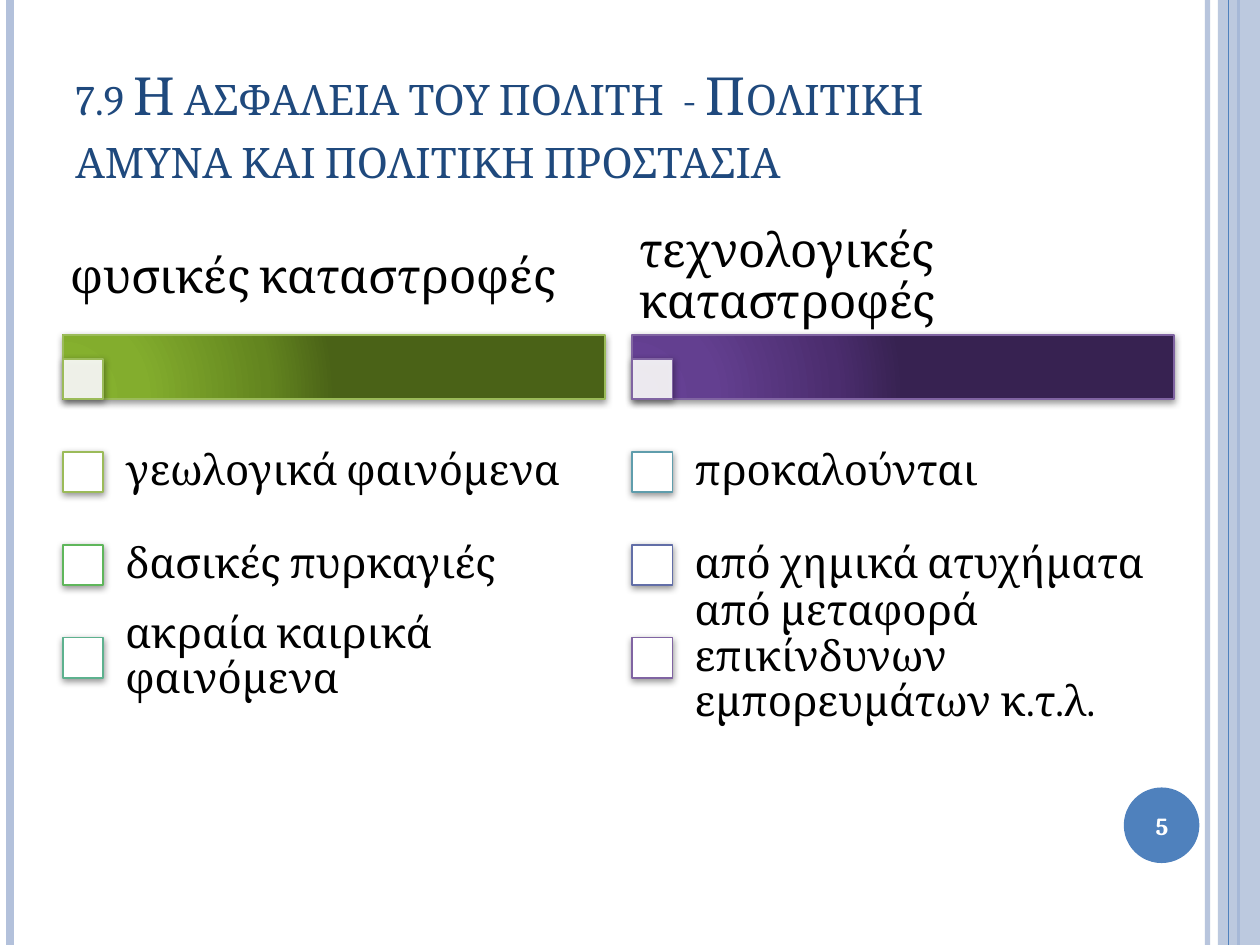
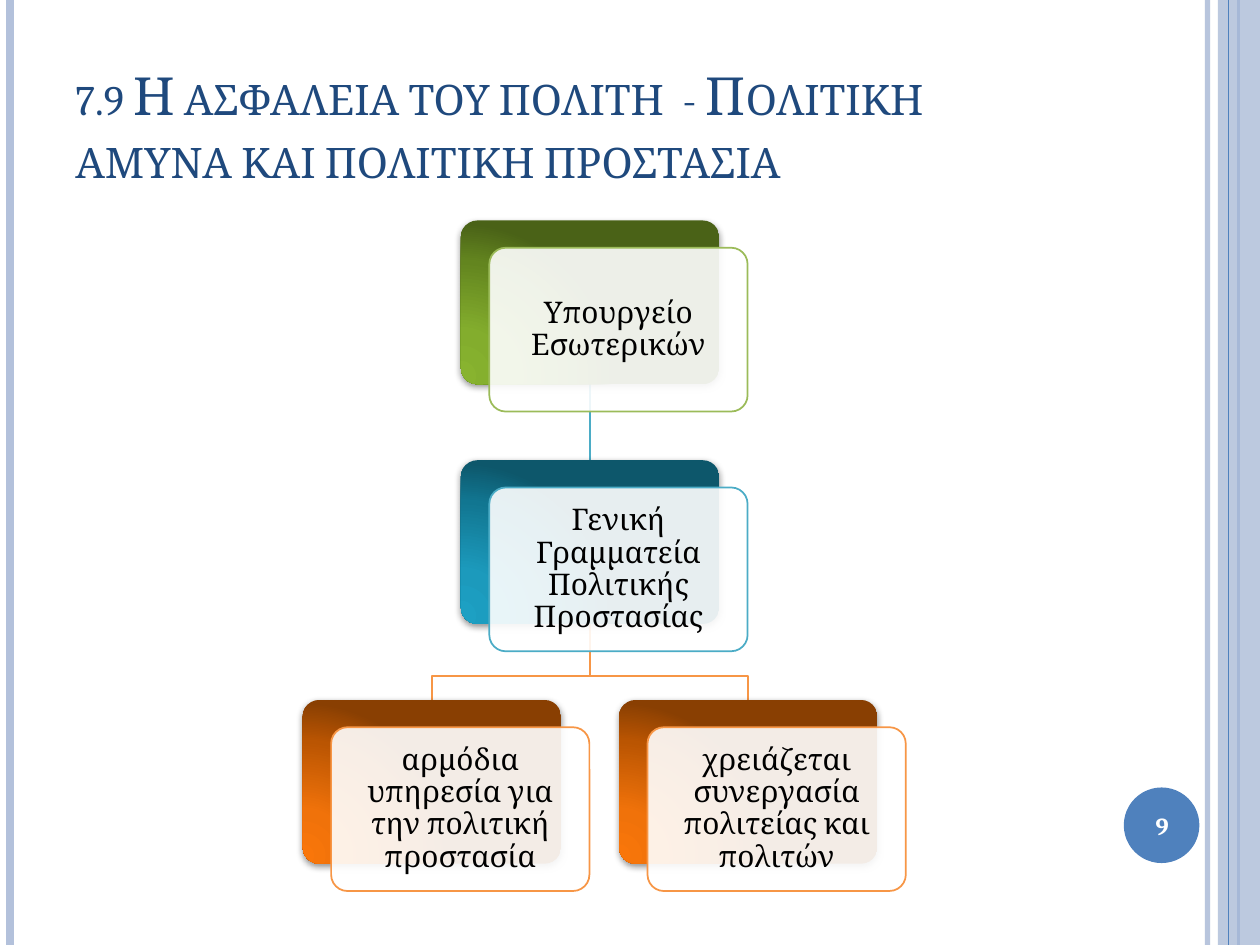
from dataclasses import dataclass

from lxml.etree import SubElement
from pptx import Presentation
from pptx.dml.color import RGBColor
from pptx.enum.shapes import MSO_CONNECTOR, MSO_SHAPE
from pptx.enum.text import MSO_ANCHOR, PP_ALIGN
from pptx.oxml.ns import qn
from pptx.util import Pt

FONT = "Cambria"
TITLE = "7.9 Η ασφαλεια του πολιτη  - Πολιτικη αμυνα και πολιτικη προστασια"
COLORS = {
    "white": "FFFFFF", "black": "000000", "title": "1F497D",
    "pale": "B3C1DB", "blue": "4F81BD",
    "green": "9BBB59", "leaf": "5FB65B", "mint": "5DB18E",
    "purple": "8064A2", "teal": "5F9DAC", "indigo": "626EA7",
    "aqua": "4BACC6", "orange": "F79646",
}
GRADIENTS = {
    "green": ("88B32F", "83AD2D", "63851F", "4A6217"),
    "purple": ("674195", "633F90", "4B2D6E", "372251"),
    "aqua": ("1DA0C3", "1C9ABC", "117691", "0D576B"),
    "orange": ("F9760A", "F0720A", "BA5502", "893F02"),
}
GRADIENT_STOPS = (0, 30, 75, 100)

# Disaster columns
COLUMN_W, BAR_Y, BAR_H = 309.6, 191.4, 36.8
BOX = 23
ROW_Y, ROW_H = 243.3, 53
LABEL_DX = 22

# Organisation chart cards
CARD_W, CARD_H, CARD_TOP = 147.6, 93.6, 126
LEVEL_STEP, KNEE_UP = 137, 13.7
FRONT_DX, FRONT_DY, CARD_PAD = 16.2, 15.6, 2.7
CENTER_X, BRANCH_DX = 337.2, 90.4


@dataclass(frozen=True)
class Rule:
    x: float
    color: str
    width: float
    alpha: int = 100


@dataclass(frozen=True)
class Item:
    text: str
    color: str


@dataclass(frozen=True)
class Column:
    x: float
    heading: str
    color: str
    items: tuple[Item, ...]


@dataclass(frozen=True)
class Card:
    text: str
    color: str
    level: int
    branch: int = 0
    parent: int | None = None

    @property
    def center(self) -> float:
        return CENTER_X + self.branch * BRANCH_DX

    @property
    def top(self) -> float:
        return CARD_TOP + self.level * LEVEL_STEP


RULES = (
    Rule(690, "pale", 3, 93),
    Rule(5.9, "pale", 4.5),
    Rule(707.8, "blue", 1.5),
)
INNER_RULE = Rule(702, "blue", 0.75)

COLUMNS = (
    Column(36, "φυσικές καταστροφές", "green", (
        Item("γεωλογικά φαινόμενα", "green"),
        Item("δασικές πυρκαγιές", "leaf"),
        Item("ακραία καιρικά φαινόμενα", "mint"),
    )),
    Column(361.3, "τεχνολογικές καταστροφές", "purple", (
        Item("προκαλούνται", "teal"),
        Item("από χημικά ατυχήματα", "indigo"),
        Item("από μεταφορά επικίνδυνων εμπορευμάτων κ.τ.λ.", "purple"),
    )),
)

CARDS = (
    Card("Υπουργείο Εσωτερικών", "green", 0),
    Card("Γενική Γραμματεία Πολιτικής Προστασίας", "aqua", 1, parent=0),
    Card("αρμόδια υπηρεσία για την πολιτική προστασία", "orange", 2, -1, 1),
    Card("χρειάζεται συνεργασία πολιτείας και πολιτών", "orange", 2, 1, 1),
)


def rgb(name: str) -> RGBColor:
    return RGBColor.from_string(COLORS[name])


def set_alpha(sp, percent: int) -> None:
    """Make the first colour of the shape translucent."""
    if percent < 100:
        clr = next(sp._element.spPr.iter(qn("a:srgbClr")))
        SubElement(clr, qn("a:alpha"), val=str(percent * 1000))


def set_gradient(sp, name: str) -> None:
    sp.fill.gradient()
    grad = sp._element.spPr.find(qn("a:gradFill"))
    grad.clear()
    grad.set("rotWithShape", "1")
    stops = SubElement(grad, qn("a:gsLst"))
    for pos, color in zip(GRADIENT_STOPS, GRADIENTS[name]):
        gs = SubElement(stops, qn("a:gs"), pos=str(pos * 1000))
        SubElement(gs, qn("a:srgbClr"), val=color)
    circle = SubElement(grad, qn("a:path"), path="circle")
    SubElement(circle, qn("a:fillToRect"),
               l="5000", t="100000", r="120000", b="10000")


def set_shadow(sp) -> None:
    effects = sp._element.spPr.find(qn("a:effectLst"))
    shadow = SubElement(effects, qn("a:outerShdw"), blurRad=str(Pt(4)),
                        dist=str(Pt(1.6)), dir="5400000", rotWithShape="0")
    clr = SubElement(shadow, qn("a:srgbClr"), val=COLORS["black"])
    SubElement(clr, qn("a:alpha"), val="42000")


def set_line(sp, color: str | None, width: float = 1) -> None:
    if color:
        sp.line.color.rgb = rgb(color)
        sp.line.width = Pt(width)
    else:
        sp.line.fill.background()


def add_box(s, kind, x: float, y: float, w: float, h: float, *,
            fill: str = "white", alpha: int = 100, gradient: str | None = None,
            line: str | None = None, shadow: bool = False):
    sp = s.shapes.add_shape(kind, Pt(x), Pt(y), Pt(w), Pt(h))
    sp.shadow.inherit = False
    if gradient:
        set_gradient(sp, gradient)
    else:
        sp.fill.solid()
        sp.fill.fore_color.rgb = rgb(fill)
        set_alpha(sp, alpha)
    set_line(sp, line)
    if shadow:
        set_shadow(sp)
    if kind == MSO_SHAPE.ROUNDED_RECTANGLE:
        sp.adjustments[0] = 0.1
    return sp


def add_line(s, x1: float, y1: float, x2: float, y2: float,
             color: str, width: float = 1, alpha: int = 100) -> None:
    sp = s.shapes.add_connector(MSO_CONNECTOR.STRAIGHT,
                                Pt(x1), Pt(y1), Pt(x2), Pt(y2))
    set_line(sp, color, width)
    set_alpha(sp, alpha)
    SubElement(sp._element.spPr, qn("a:effectLst"))


def add_text(s, text: str, x: float, y: float, w: float, h: float, size: float,
             *, color: str = "black", bold: bool = False, small_caps: bool = False,
             align=PP_ALIGN.LEFT, anchor=MSO_ANCHOR.MIDDLE,
             spacing: float = 0.9, inset: tuple[float, float] = (7.2, 3.6)) -> None:
    tf = s.shapes.add_textbox(Pt(x), Pt(y), Pt(w), Pt(h)).text_frame
    p = tf.paragraphs[0]
    r = p.add_run()
    r.text = text
    across, down = map(Pt, inset)
    formats = (
        (tf, {"word_wrap": True, "vertical_anchor": anchor,
              "margin_left": across, "margin_right": across,
              "margin_top": down, "margin_bottom": down}),
        (p, {"alignment": align, "line_spacing": spacing}),
        (r.font, {"name": FONT, "size": Pt(size), "bold": bold}),
    )
    for target, values in formats:
        for name, value in values.items():
            setattr(target, name, value)
    r.font.color.rgb = rgb(color)
    if small_caps:
        r._r.get_or_add_rPr().set("cap", "small")


def add_rule(s, rule: Rule) -> None:
    add_line(s, rule.x, 0, rule.x, 540, rule.color, rule.width, rule.alpha)


def add_frame(s) -> None:
    """Side bands and the disc behind the slide number."""
    for rule in RULES:
        add_rule(s, rule)
    add_box(s, MSO_SHAPE.RECTANGLE, 696, 0, 24, 540, fill="pale", alpha=87)
    add_rule(s, INNER_RULE)
    add_box(s, MSO_SHAPE.OVAL, 642.2, 450, 43.2, 43.2, fill="blue")


def add_title_and_number(s, number: int) -> None:
    add_text(s, str(number), 640, 451.4, 48.2, 41, 14, color="white",
             bold=True, align=PP_ALIGN.CENTER, spacing=1.0)
    add_text(s, TITLE, 36, 21.6, 588, 90, 30, color="title", small_caps=True,
             anchor=MSO_ANCHOR.BOTTOM, spacing=1.0)


def add_column(s, col: Column) -> None:
    rect = MSO_SHAPE.RECTANGLE
    add_box(s, rect, col.x, BAR_Y, COLUMN_W, BAR_H,
            gradient=col.color, line=col.color, shadow=True)
    add_box(s, rect, col.x, BAR_Y + BAR_H - BOX, BOX, BOX,
            alpha=90, line=col.color, shadow=True)
    add_text(s, col.heading, col.x, 126, COLUMN_W, BAR_Y - 126, 27,
             inset=(4.1, 2.7))
    for i, item in enumerate(col.items):
        y = ROW_Y + i * ROW_H
        add_box(s, rect, col.x, y + (ROW_H - BOX) / 2, BOX, BOX,
                line=item.color, shadow=True)
        add_text(s, item.text, col.x + LABEL_DX, y, COLUMN_W - LABEL_DX, ROW_H,
                 24, inset=(13.7, 13.7))


def add_link(s, card: Card) -> None:
    """Line from the parent's lower edge to the card's upper edge."""
    parent = CARDS[card.parent]
    start = (parent.center, parent.top + CARD_H)
    end = (card.center, card.top)
    if start[0] == end[0]:
        add_line(s, *start, *end, card.color)
        return
    knee = card.top - KNEE_UP
    points = [(Pt(x), Pt(y)) for x, y in
              (start, (start[0], knee), (end[0], knee), end)]
    builder = s.shapes.build_freeform(*points[0])
    builder.add_line_segments(points[1:], close=False)
    sp = builder.convert_to_shape()
    sp.shadow.inherit = False
    sp.fill.background()
    set_line(sp, card.color)


def add_card(s, card: Card) -> None:
    x, y = card.center - CARD_W / 2, card.top
    kind = MSO_SHAPE.ROUNDED_RECTANGLE
    add_box(s, kind, x, y, CARD_W, CARD_H, gradient=card.color, shadow=True)
    x, y = x + FRONT_DX, y + FRONT_DY
    add_box(s, kind, x, y, CARD_W, CARD_H, alpha=90, line=card.color)
    add_text(s, card.text, x + CARD_PAD, y + CARD_PAD, CARD_W - 2 * CARD_PAD,
             CARD_H - 2 * CARD_PAD, 17, align=PP_ALIGN.CENTER, inset=(5, 5))


def main() -> None:
    prs = Presentation()
    prs.slide_width, prs.slide_height = Pt(720), Pt(540)
    blank = prs.slide_layouts[6]

    # Kinds of disaster
    s = prs.slides.add_slide(blank)
    add_frame(s)
    for col in COLUMNS:
        add_column(s, col)
    add_title_and_number(s, 5)

    # Civil protection hierarchy
    s = prs.slides.add_slide(blank)
    add_frame(s)
    for card in reversed(CARDS):
        if card.parent is not None:
            add_link(s, card)
    for card in CARDS:
        add_card(s, card)
    add_title_and_number(s, 9)

    prs.save("out.pptx")


if __name__ == "__main__":
    main()
